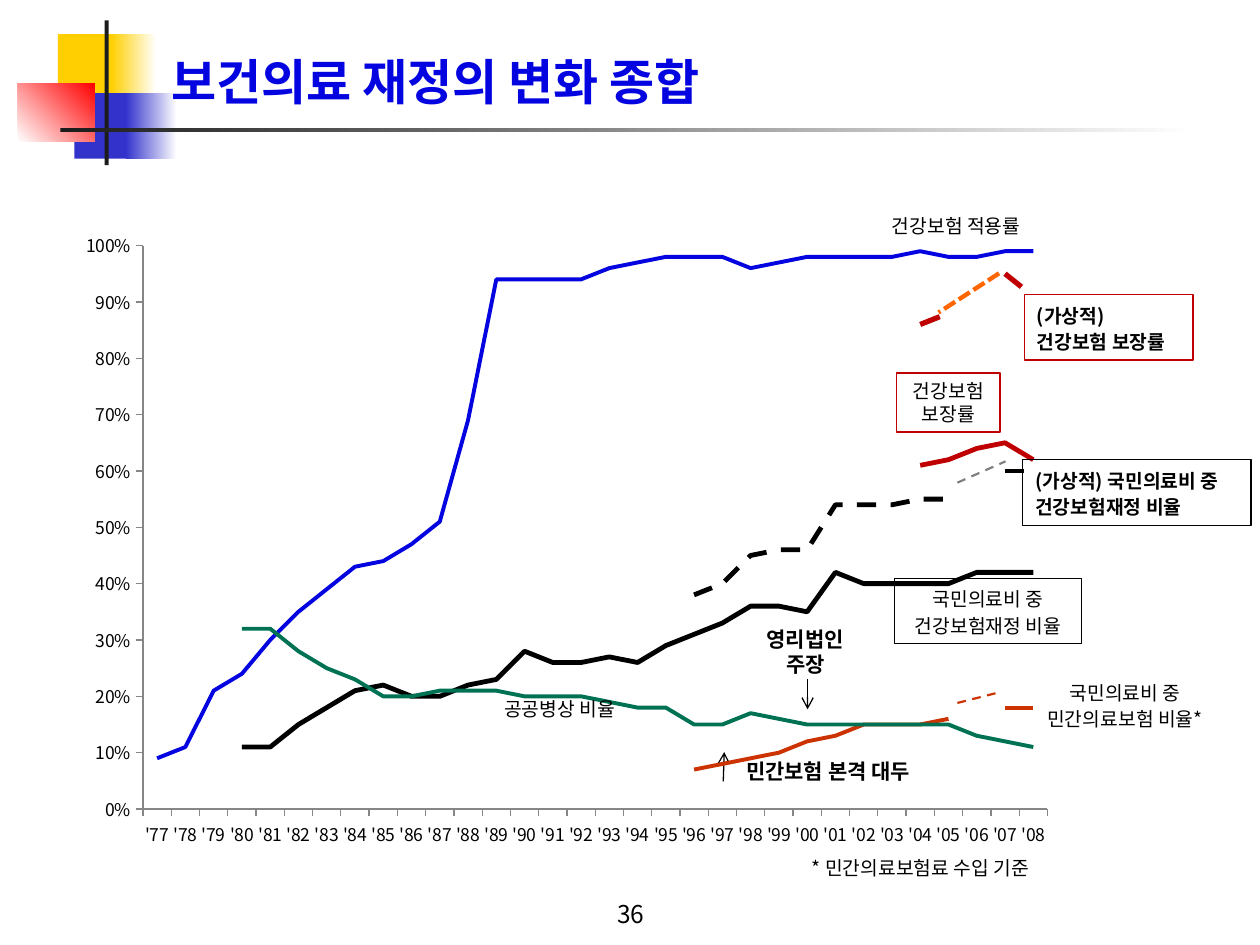
from lxml.etree import SubElement
from pptx import Presentation
from pptx.chart.data import CategoryChartData
from pptx.dml.color import RGBColor
from pptx.enum.chart import XL_CHART_TYPE as ChartType, XL_TICK_MARK as TickMark
from pptx.enum.dml import MSO_LINE_DASH_STYLE as Dash
from pptx.enum.shapes import MSO_CONNECTOR as Connector, MSO_SHAPE as Shape
from pptx.enum.text import MSO_ANCHOR as Anchor, MSO_AUTO_SIZE as AutoSize, PP_ALIGN as Align
from pptx.oxml import parse_xml
from pptx.oxml.ns import nsdecls, qn
from pptx.util import Cm, Pt

BLUE, BLACK, RUST, GREEN, RED = "0404E0", "000000", "CC3300", "007254", "C00000"
YELLOW, INDIGO, CHARCOAL, WHITE = "FFCF01", "3333CC", "1C1C1C", "FFFFFF"
YEARS = [f"'{year % 100:02d}" for year in range(1977, 2009)]

# Name, colour, width, dash, percentages (each series ends in '08)
SERIES = [
    ("건강보험 적용률", BLUE, 2.25, None,
     [9, 11, 21, 24, 30, 35, 39, 43, 44, 47, 51, 69, 94, 94, 94, 94,
      96, 97, 98, 98, 98, 96, 97, 98, 98, 98, 98, 99, 98, 98, 99, 99]),
    ("국민의료비 중 건강보험재정 비율", BLACK, 2.75, None,
     [11, 11, 15, 18, 21, 22, 20, 20, 22, 23, 28, 26, 26, 27, 26,
      29, 31, 33, 36, 36, 35, 42, 40, 40, 40, 40, 42, 42, 42]),
    ("국민의료비 중 민간의료보험 비율", RUST, 2.25, None,
     [7, 8, 9, 10, 12, 13, 15, 15, 15, 16, None, 18, 18]),
    ("공공병상 비율", GREEN, 2.25, None,
     [32, 32, 28, 25, 23, 20, 20, 21, 21, 21, 20, 20, 20, 19, 18,
      18, 15, 15, 17, 16, 15, 15, 15, 15, 15, 15, 13, 12, 11]),
    ("건강보험 보장률", RED, 2.75, None, [61, 62, 64, 65, 62]),
    ("(가상적) 국민의료비 중 건강보험재정 비율", BLACK, 2.75, Dash.DASH,
     [38, 40, 45, 46, 46, 54, 54, 54, 55, 55, None, 60, 60]),
    ("(가상적) 건강보험 보장률", RED, 3, Dash.DASH, [86, 88, None, 95, 91]),
]


def color(value):
    return RGBColor.from_string(value)


def write(frame, text, size=11, bold=False, ink=BLACK, font="Noto Sans CJK KR",
          align=Align.CENTER, spacing=None):
    """Fill a text frame, one paragraph for each line of the text."""
    for index, line in enumerate(text.split("\n")):
        paragraph = frame.add_paragraph() if index else frame.paragraphs[0]
        paragraph.alignment = align
        if spacing:
            paragraph.line_spacing = Pt(spacing)
        run = paragraph.add_run()
        run.text = line
        run.font.name, run.font.size, run.font.bold = font, Pt(size), bold
        run.font.color.rgb = color(ink)
        east_asian = SubElement(run.font._element, qn("a:ea"))
        east_asian.set("typeface", "Noto Sans CJK KR")


class SlideBuilder:
    def __init__(self, slide):
        self.slide = slide
        self.shapes = slide.shapes
        self.axis_color = "868686"

    def title(self, text, box):
        title = self.shapes.title
        title.left, title.top, title.width, title.height = map(Cm, box)
        title.text_frame.vertical_anchor = Anchor.BOTTOM
        write(title.text_frame, text, size=28, bold=True, ink=BLUE, font="Arial",
              align=Align.LEFT)
        title.element.getparent().append(title.element)  # above the ornament

    def block(self, box, start, end=None, angle=0):
        shape = self.shapes.add_shape(Shape.RECTANGLE, *map(Cm, box))
        shape.shadow.inherit = False
        shape.line.fill.background()
        if end is None:
            shape.fill.solid()
            shape.fill.fore_color.rgb = color(start)
        else:
            shape.fill.gradient()
            shape.fill.gradient_angle = angle
            for stop, value, position in zip(shape.fill.gradient_stops, (start, end), (0, 1)):
                stop.color.rgb = color(value)
                stop.position = position

    def label(self, text, box, border=None, wrap=False, anchor=Anchor.TOP, **style):
        if border:
            shape = self.shapes.add_shape(Shape.RECTANGLE, *map(Cm, box))
            shape.shadow.inherit = False
            shape.fill.background()
            shape.line.color.rgb = color(border)
            shape.line.width = Pt(0.75)
        else:
            shape = self.shapes.add_textbox(*map(Cm, box))
        frame = shape.text_frame
        frame.word_wrap = wrap
        frame.vertical_anchor = anchor
        if not wrap:
            frame.auto_size = AutoSize.SHAPE_TO_FIT_TEXT
        write(frame, text, **style)

    def line(self, ends, ink=BLACK, width=0.75, dash=None, arrow=False):
        connector = self.shapes.add_connector(Connector.STRAIGHT, *map(Cm, ends))
        connector.line.color.rgb = color(ink)
        connector.line.width = Pt(width)
        if dash:
            connector.line.dash_style = dash
        properties = connector.element.spPr
        if arrow:
            SubElement(properties.find(qn("a:ln")), qn("a:tailEnd")).set("type", "arrow")
        SubElement(properties, qn("a:effectLst"))

    def line_chart(self, box, plot):
        data = CategoryChartData(number_format="0%")
        data.categories = YEARS
        for name, *_, values in SERIES:
            shares = [None if value is None else value / 100 for value in values]
            data.add_series(name, [None] * (len(YEARS) - len(shares)) + shares)
        chart = self.shapes.add_chart(ChartType.LINE, *map(Cm, box), data).chart
        chart.has_legend = chart.has_title = False
        chart.font.name, chart.font.size = "Noto Sans CJK KR", Pt(10)
        chart.font.color.rgb = color(BLACK)

        for series, (_, ink, width, dash, _) in zip(chart.plots[0].series, SERIES):
            series.smooth = False
            series.format.line.color.rgb = color(ink)
            series.format.line.width = Pt(width)
            if dash:
                series.format.line.dash_style = dash

        for axis in (chart.category_axis, chart.value_axis):
            axis.has_major_gridlines = False
            axis.major_tick_mark = TickMark.OUTSIDE
            axis.minor_tick_mark = TickMark.NONE
            axis.format.line.color.rgb = color(self.axis_color)
        value_axis = chart.value_axis
        value_axis.minimum_scale, value_axis.maximum_scale = 0, 1
        value_axis.major_unit = 0.1
        value_axis.tick_labels.number_format = "0%"
        value_axis.tick_labels.number_format_is_linked = False

        # Fixed plot area, as shares of the chart
        area = chart.element.find(".//" + qn("c:plotArea"))
        for layout in area.findall(qn("c:layout")):
            area.remove(layout)
        places = "".join(f'<c:{key} val="{value}"/>' for key, value in zip("xywh", plot))
        area.insert(0, parse_xml(
            f'<c:layout {nsdecls("c")}><c:manualLayout><c:layoutTarget val="inner"/>'
            f'<c:xMode val="edge"/><c:yMode val="edge"/>{places}</c:manualLayout></c:layout>'))


def main():
    presentation = Presentation()
    presentation.slide_width, presentation.slide_height = Cm(25.4), Cm(19.05)
    builder = SlideBuilder(presentation.slides.add_slide(presentation.slide_layouts[5]))

    # Ornament and title
    builder.block((1.17, 0.69, 1.22, 1.32), YELLOW)
    builder.block((2.24, 0.69, 0.91, 1.32), YELLOW, WHITE)
    builder.block((1.5, 1.88, 1.17, 1.32), INDIGO)
    builder.block((2.54, 1.88, 1.02, 1.32), INDIGO, WHITE)
    builder.block((0.36, 1.68, 1.55, 1.17), WHITE, "FF0000", angle=45)
    builder.block((2.11, 0.41, 0.08, 2.92), CHARCOAL)
    builder.block((1.22, 2.59, 22.86, 0.08), CHARCOAL, WHITE)
    builder.title("보건의료 재정의 변화 종합", (3.2, 0.58, 21.64, 1.78))

    # Events with arrows
    builder.label("영리법인\n주장", (15.04, 12.5, 2.39, 1.4), wrap=True, size=12, bold=True)
    builder.line((16.28, 13.69, 16.28, 14.3), arrow=True)
    builder.label("민간보험 본격 대두", (14.5, 15.16, 4.39, 0.79), wrap=True, size=12, bold=True)
    builder.line((14.58, 15.75, 14.6, 15.16), arrow=True)

    # Chart
    builder.line_chart((1.35, 4.45, 20.17, 12.88), plot=(0.076, 0.039, 0.904, 0.882))

    # Series labels
    builder.label("건강보험 적용률", (17.73, 4.19, 3.4, 0.74), align=Align.LEFT)
    builder.label("건강보험\n보장률", (18.08, 7.52, 2.08, 1.19), border=RED)
    builder.label("국민의료비 중\n건강보험재정 비율", (18.03, 11.66, 3.78, 1.32),
                  border=BLACK, spacing=15)
    builder.label("공공병상 비율", (9.78, 13.87, 3, 0.79), spacing=15)
    builder.label("국민의료비 중\n민간의료보험 비율*", (20.7, 13.54, 3.96, 1.32), spacing=15)
    hypothetical = dict(bold=True, align=Align.LEFT, spacing=15)
    builder.label("(가상적) 국민의료비 중\n건강보험재정 비율", (20.62, 9.27, 4.6, 1.32),
                  border=BLACK, **hypothetical)
    builder.label("(가상적)\n건강보험 보장률", (20.65, 5.94, 3.4, 1.32),
                  border=RED, **hypothetical)

    # Bridges over the missing year
    builder.line((19.3, 9.73, 20.27, 9.3), "808080", 1.25, Dash.DASH)
    builder.line((20.14, 5.51, 18.92, 6.3), "FF6600", 2.5, Dash.SQUARE_DOT)
    builder.line((19.3, 14.17, 20.09, 13.97), RUST, 1.25, Dash.DASH)

    # Footnote and page number
    builder.label("* 민간의료보험료 수입 기준", (15.85, 17.07, 5.41, 0.79), spacing=15)
    builder.label("36", (8.69, 18.06, 8.05, 0.79), wrap=True, anchor=Anchor.BOTTOM, size=14)

    presentation.save("out.pptx")


if __name__ == "__main__":
    main()
